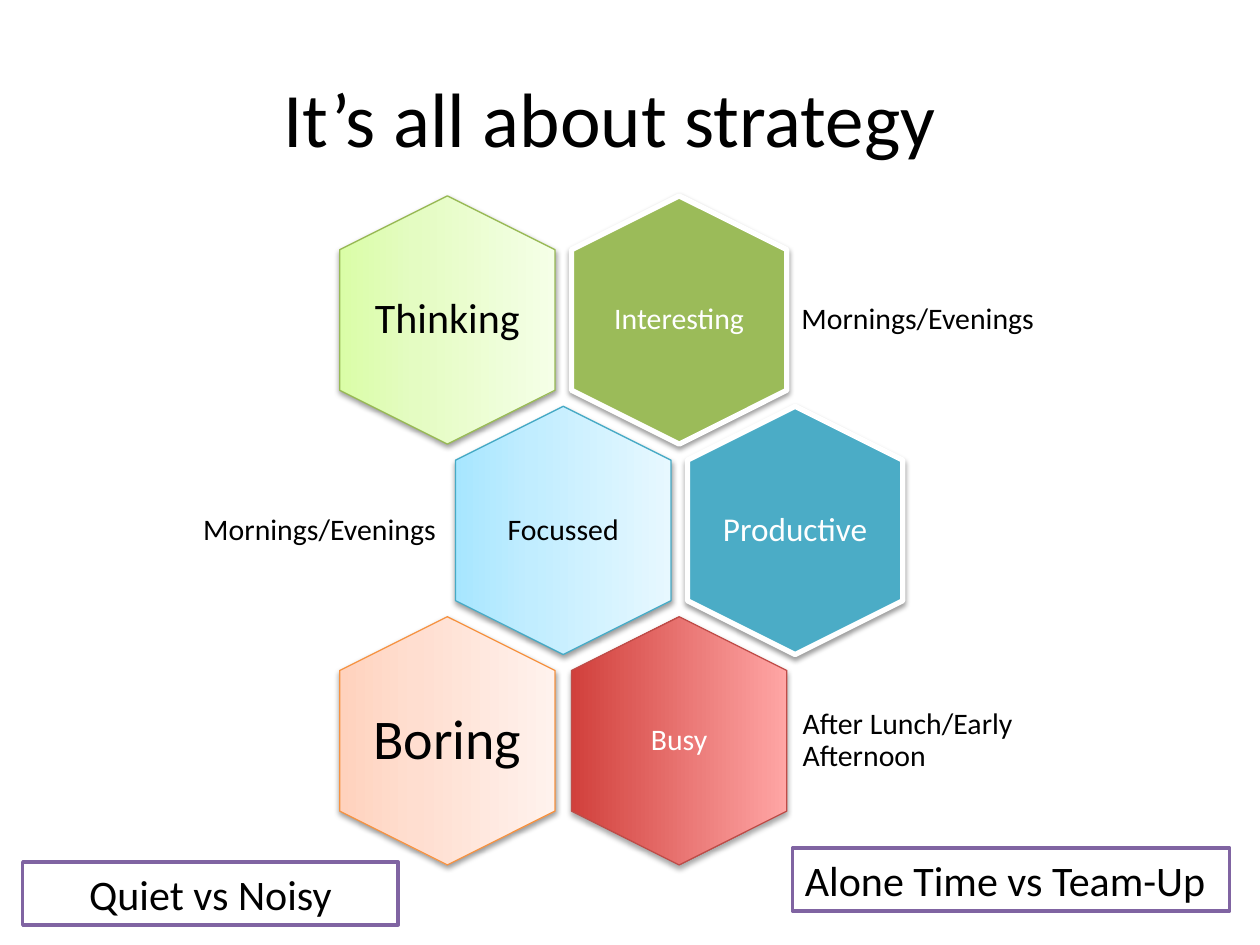
from lxml import etree
from pptx import Presentation
from pptx import util as u
from pptx.dml import color
from pptx.enum import shapes, text
from pptx.oxml import ns

FONT = "Calibri"
COLORS = {
    "black": "000000", "white": "FFFFFF", "purple": "8064A2",
    "green": "9BBB59", "green_line": "98B955",
    "blue": "4BACC6", "blue_line": "46AAC5",
    "red_line": "BF4C48", "orange_line": "F69240",
}
GRADIENTS = {
    "pale_green": [(0, "DAFDA7"), (35, "E4FCC2"), (100, "F5FFE7")],
    "pale_blue": [(0, "A7E6FF"), (35, "C1EDFF"), (100, "E7F8FF")],
    "red": [(0, "D1403C"), (100, "FFA6A5")],
    "pale_orange": [(0, "FFD2BD"), (35, "FFDED0"), (100, "FFF2ED")],
}
HEX_LENGTH, HEX_WIDTH = 1.97, 1.71
FIRST_X, FIRST_Y = 3.55, 2.54
HALF_STEP, ROW_STEP = 0.92, 1.67
LABEL_HEIGHT = 1.18
ALIGN = text.PP_ALIGN

# label, half steps across, row, fill, line, line width, text size, text colour, inset
HEXAGONS = [
    ("Interesting", 2, 0, "green", "white", 3, 17, "white", 0.07),
    ("Thinking", 0, 0, "pale_green", "green_line", 0.75, 24, "black", 0),
    ("Focussed", 1, 1, "pale_blue", "blue_line", 0.75, 17, "black", 0.07),
    ("Productive", 3, 1, "blue", "white", 3, 19, "white", 0),
    ("Busy", 2, 2, "red", "red_line", 0.75, 17, "white", 0.07),
    ("Boring", 0, 2, "pale_orange", "orange_line", 0.75, 32, "black", 0),
]
SIDE_LABELS = [
    ("Mornings/Evenings", 6.29, 2.19, 0, ALIGN.LEFT),
    ("Mornings/Evenings", 1.41, 2.12, 1, ALIGN.RIGHT),
    ("After Lunch/Early Afternoon", 6.3, 2.19, 2, ALIGN.LEFT),
]
CAPTIONS = [
    ("Quiet vs Noisy", 0.18, 6.84, 2.98, ALIGN.CENTER),
    ("Alone Time vs Team-Up", 6.29, 6.73, 3.47, ALIGN.LEFT),
]


def rgb(name):
    return color.RGBColor.from_string(COLORS[name])


def write(shape, words, size, font_color="black", align=ALIGN.CENTER, line_spacing=1.0):
    frame = shape.text_frame
    frame.word_wrap = True
    frame.vertical_anchor = text.MSO_ANCHOR.MIDDLE
    paragraph = frame.paragraphs[0]
    paragraph.text = words
    paragraph.alignment = align
    paragraph.line_spacing = line_spacing
    paragraph.font.name = FONT
    paragraph.font.size = u.Pt(size)
    paragraph.font.color.rgb = rgb(font_color)
    return frame


def add_title(slide, words):
    box = slide.shapes.add_textbox(u.Inches(0.5), u.Inches(0.3), u.Inches(9), u.Inches(1.25))
    frame = write(box, words, 44)
    frame.margin_right = u.Inches(0.42)


def add_label(slide, words, left, center_y, width, height, size, font_color, align, inset):
    box = slide.shapes.add_textbox(u.Inches(left), u.Inches(center_y - height / 2),
                                   u.Inches(width), u.Inches(height))
    frame = write(box, words, size, font_color, align, 0.9)
    frame.margin_left = frame.margin_right = u.Inches(inset)
    frame.margin_top = frame.margin_bottom = u.Inches(inset)


def add_caption(slide, words, left, top, width, align):
    shape = slide.shapes.add_shape(shapes.MSO_SHAPE.RECTANGLE, u.Inches(left), u.Inches(top),
                                   u.Inches(width), u.Inches(0.5))
    shape.shadow.inherit = False
    shape.fill.solid()
    shape.fill.fore_color.rgb = rgb("white")
    shape.line.color.rgb = rgb("purple")
    shape.line.width = u.Pt(2)
    frame = write(shape, words, 24, align=align)
    frame.auto_size = text.MSO_AUTO_SIZE.SHAPE_TO_FIT_TEXT


def add_child(parent, tag, **attributes):
    values = {key: str(value) for key, value in attributes.items()}
    return etree.SubElement(parent, ns.qn(tag), values)


def set_gradient(shape, stops):
    shape.fill.gradient()
    shape.fill.gradient_angle = 90
    stop_list = shape.element.spPr.find(".//" + ns.qn("a:gsLst"))
    for stop in list(stop_list):
        stop_list.remove(stop)
    for position, value in stops:
        stop = add_child(stop_list, "a:gs", pos=position * 1000)
        add_child(stop, "a:srgbClr", val=value)


def add_shadow(shape, opacity, distance):
    shape.shadow.inherit = False
    effects = shape.element.spPr.find(ns.qn("a:effectLst"))
    shadow = add_child(effects, "a:outerShdw", blurRad=u.Pt(3.1), dist=u.Pt(distance),
                       dir=90 * 60000, rotWithShape=0)
    tint = add_child(shadow, "a:srgbClr", val=COLORS["black"])
    add_child(tint, "a:alpha", val=opacity * 1000)


def add_hexagon(slide, words, half_steps, row, fill, line, line_width, size, font_color, inset):
    center_x = FIRST_X + half_steps * HALF_STEP
    center_y = FIRST_Y + row * ROW_STEP
    shape = slide.shapes.add_shape(
        shapes.MSO_SHAPE.HEXAGON, u.Inches(center_x - HEX_LENGTH / 2),
        u.Inches(center_y - HEX_WIDTH / 2), u.Inches(HEX_LENGTH), u.Inches(HEX_WIDTH))
    shape.rotation = 90
    shape.adjustments[0] = 0.25
    if fill in GRADIENTS:
        set_gradient(shape, GRADIENTS[fill])
    else:
        shape.fill.solid()
        shape.fill.fore_color.rgb = rgb(fill)
    shape.line.color.rgb = rgb(line)
    shape.line.width = u.Pt(line_width)
    add_shadow(shape, *((35, 1.8) if fill == "red" else (38, 1.6)))
    add_label(slide, words, center_x - 0.59, center_y, 1.18, 1.35, size, font_color,
              ALIGN.CENTER, inset)


def main():
    presentation = Presentation()
    presentation.slide_width = u.Inches(10)
    presentation.slide_height = u.Inches(7.5)
    slide = presentation.slides.add_slide(presentation.slide_layouts[6])
    add_title(slide, "It’s all about strategy")
    for caption in CAPTIONS:
        add_caption(slide, *caption)
    for hexagon in HEXAGONS:
        add_hexagon(slide, *hexagon)
    for words, left, width, row, align in SIDE_LABELS:
        add_label(slide, words, left, FIRST_Y + row * ROW_STEP, width, LABEL_HEIGHT, 17,
                  "black", align, 0.07)
    presentation.save("out.pptx")


if __name__ == "__main__":
    main()
